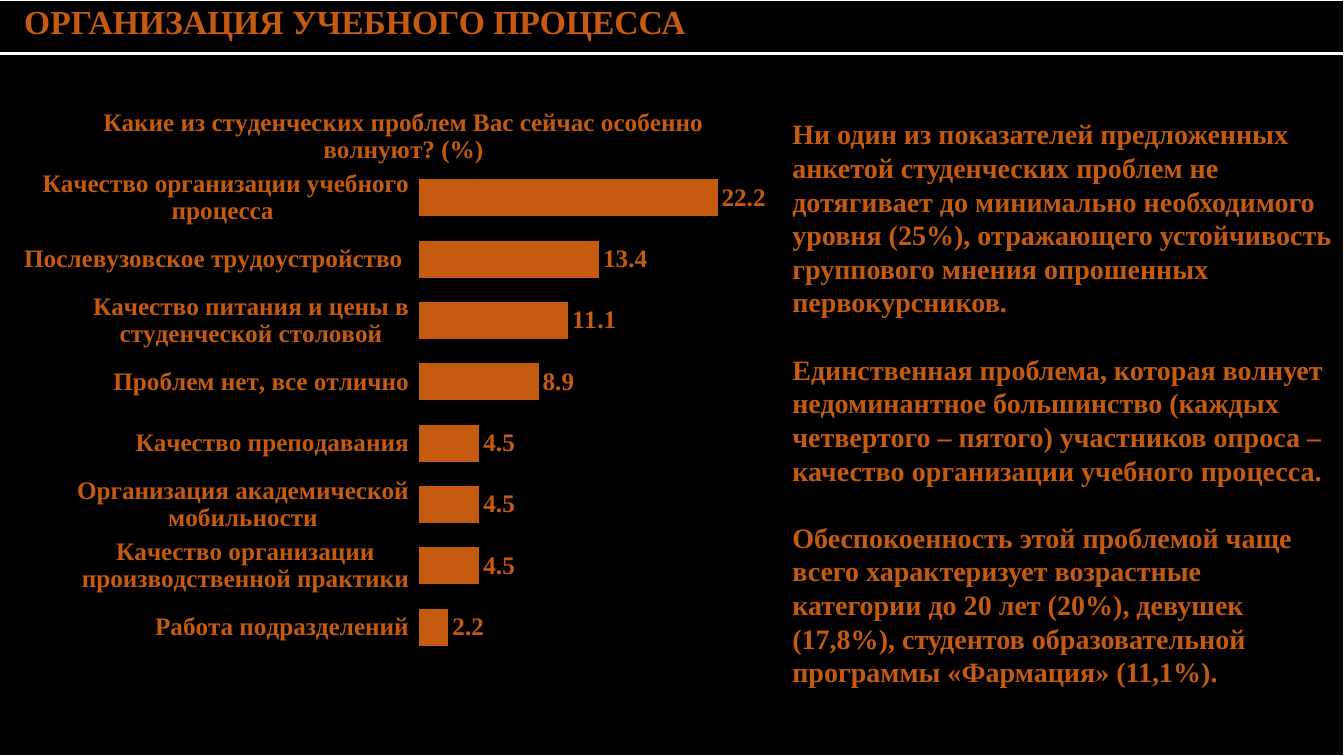
from dataclasses import dataclass

from lxml import etree
from pptx import Presentation
from pptx.chart.data import CategoryChartData
from pptx.dml.color import RGBColor
from pptx.enum.chart import XL_CHART_TYPE, XL_LABEL_POSITION, XL_TICK_LABEL_POSITION, XL_TICK_MARK
from pptx.enum.text import MSO_ANCHOR
from pptx.oxml import parse_xml
from pptx.oxml.ns import nsdecls, qn
from pptx.util import Inches, Pt

BAR_CLUSTERED = XL_CHART_TYPE.BAR_CLUSTERED
OUTSIDE_END = XL_LABEL_POSITION.OUTSIDE_END
LABELS_LOW = XL_TICK_LABEL_POSITION.LOW
NO_TICK = XL_TICK_MARK.NONE
TOP = MSO_ANCHOR.TOP

ORANGE = RGBColor(0xC5, 0x5A, 0x11)
BLACK = RGBColor(0x00, 0x00, 0x00)
WHITE = RGBColor(0xFF, 0xFF, 0xFF)

HEADING = "ОРГАНИЗАЦИЯ УЧЕБНОГО ПРОЦЕССА"
QUESTION = "Какие из студенческих проблем Вас сейчас особенно волнуют? (%)"
FINDINGS = (
    "Ни один из показателей предложенных анкетой студенческих проблем не дотягивает "
    "до минимально необходимого уровня (25%), отражающего устойчивость группового "
    "мнения опрошенных первокурсников.",
    "Единственная проблема, которая волнует недоминантное большинство (каждых "
    "четвертого – пятого) участников опроса – качество организации учебного процесса.",
    "Обеспокоенность этой проблемой чаще всего характеризует возрастные категории "
    "до 20 лет (20%), девушек (17,8%), студентов образовательной программы "
    "«Фармация» (11,1%).",
)


@dataclass(frozen=True)
class Problem:
    name: str
    share: float | None


# Bottom bar first; the empty category keeps the lowest slot free
PROBLEMS = (
    Problem("", None),
    Problem("Работа подразделений", 2.2),
    Problem("Качество организации производственной практики", 4.5),
    Problem("Организация академической мобильности", 4.5),
    Problem("Качество преподавания", 4.5),
    Problem("Проблем нет, все отлично", 8.9),
    Problem("Качество питания и цены в студенческой столовой", 11.1),
    Problem("Послевузовское трудоустройство ", 13.4),
    Problem("Качество организации учебного процесса ", 22.2),
)


def style_font(font, size: float) -> None:
    for attribute, value in {"name": "Times New Roman", "size": Pt(size), "bold": True}.items():
        setattr(font, attribute, value)
    font.color.rgb = ORANGE


def set_borders(cell, widths: dict[str, float]) -> None:
    properties = cell._tc.get_or_add_tcPr()
    for index, (side, width) in enumerate(widths.items()):
        border = parse_xml(
            f'<a:ln{side} {nsdecls("a")} w="{Pt(width)}"><a:solidFill>'
            f'<a:srgbClr val="{WHITE}"/></a:solidFill></a:ln{side}>'
        )
        properties.insert(index, border)


def add_background_table(slide) -> None:
    row_heights = (0.53, 6.97)
    table = slide.shapes.add_table(
        len(row_heights), 1, Inches(-0.15), Inches(0), Inches(13.48), Inches(sum(row_heights))
    ).table
    bottom_widths = (3, 1)
    for index, (height, bottom) in enumerate(zip(row_heights, bottom_widths)):
        table.rows[index].height = Inches(height)
        cell = table.cell(index, 0)
        cell.fill.solid()
        cell.fill.fore_color.rgb = BLACK
        top = 1 if index == 0 else bottom_widths[index - 1]
        set_borders(cell, {"L": 1, "R": 1, "T": top, "B": bottom})

    heading_cell = table.cell(0, 0)
    heading_cell.margin_left = Inches(0.39)
    heading_cell.text = HEADING
    style_font(heading_cell.text_frame.paragraphs[0].runs[0].font, 24)


def add_findings(slide) -> None:
    frame = slide.shapes.add_textbox(
        Inches(7.76), Inches(0.78), Inches(5.58), Inches(6.83)
    ).text_frame
    frame.word_wrap = True
    frame.vertical_anchor = TOP
    frame.margin_top = Inches(0.38)
    for index, finding in enumerate(FINDINGS):
        paragraph = frame.add_paragraph() if index else frame.paragraphs[0]
        paragraph.space_before = Pt(24 if index else 0)
        run = paragraph.add_run()
        run.text = finding
        style_font(run.font, 20)


def place_plot(chart, x: float, y: float, width: float, height: float) -> None:
    plot_area = chart._chartSpace.chart.plotArea
    for old_layout in plot_area.findall(qn("c:layout")):
        plot_area.remove(old_layout)
    layout = etree.Element(qn("c:layout"))
    manual = etree.SubElement(layout, qn("c:manualLayout"))
    settings = {
        "layoutTarget": "inner", "xMode": "edge", "yMode": "edge",
        "x": x, "y": y, "w": width, "h": height,
    }
    for tag, value in settings.items():
        etree.SubElement(manual, qn(f"c:{tag}")).set("val", str(value))
    plot_area.insert(0, layout)


def add_problem_chart(slide) -> None:
    data = CategoryChartData()
    data.categories = [problem.name for problem in PROBLEMS]
    data.add_series("Series 1", [problem.share for problem in PROBLEMS])
    chart = slide.shapes.add_chart(
        BAR_CLUSTERED, Inches(0.12), Inches(0.83), Inches(7.76), Inches(6.37), data
    ).chart
    chart.has_legend = False
    chart.font.name = "Calibri"
    chart.font.size = Pt(10)
    place_plot(chart, 0.52, 0.13, 0.43, 0.86)

    # Question above the bars
    question = chart.chart_title.text_frame
    question.text = QUESTION
    style_font(question.paragraphs[0].runs[0].font, 18)
    chart.chart_title.include_in_layout = False

    # Axes
    problem_axis = chart.category_axis
    for attribute, value in {
        "major_tick_mark": NO_TICK,
        "minor_tick_mark": NO_TICK,
        "tick_label_position": LABELS_LOW,
        "has_major_gridlines": False,
    }.items():
        setattr(problem_axis, attribute, value)
    style_font(problem_axis.tick_labels.font, 18)
    problem_axis.format.line.color.rgb = BLACK
    problem_axis.format.line.width = Pt(0.75)
    for attribute, value in {
        "minimum_scale": 0,
        "maximum_scale": 25,
        "has_major_gridlines": False,
        "visible": False,
    }.items():
        setattr(chart.value_axis, attribute, value)

    # Bars and their values
    plot = chart.plots[0]
    plot.gap_width = 66
    plot.vary_by_categories = False
    shares = plot.series[0]
    shares.format.fill.solid()
    shares.format.fill.fore_color.rgb = ORANGE
    labels = shares.data_labels
    labels.show_value = True
    labels.position = OUTSIDE_END
    style_font(labels.font, 18)


def main() -> None:
    presentation = Presentation()
    presentation.slide_width = Inches(13.33)
    presentation.slide_height = Inches(7.5)
    # The heading sits in the table, so the blank layout is used
    slide = presentation.slides.add_slide(presentation.slide_layouts[6])
    add_background_table(slide)
    add_findings(slide)
    add_problem_chart(slide)
    presentation.save("out.pptx")


if __name__ == "__main__":
    main()
